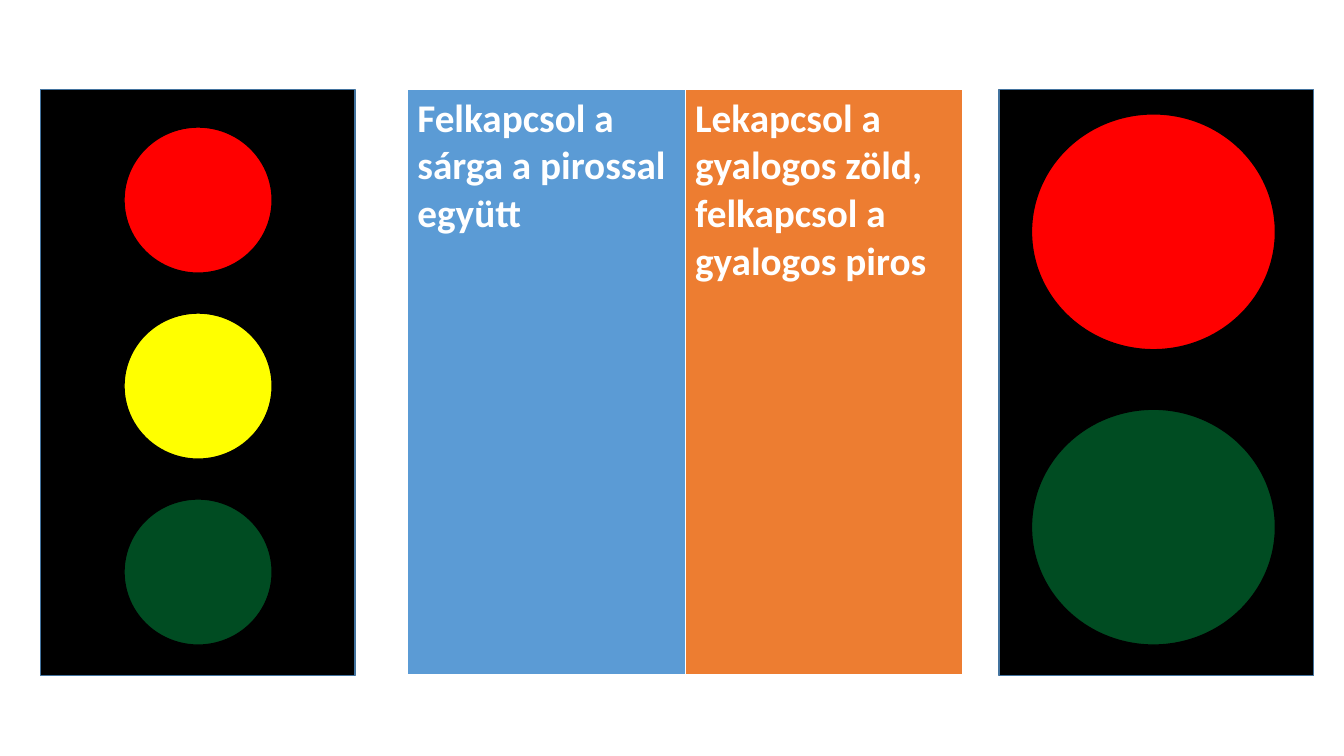
from pptx import Presentation
from pptx.dml.color import RGBColor
from pptx.enum.shapes import MSO_SHAPE
from pptx.oxml import parse_xml
from pptx.oxml.ns import nsdecls
from pptx.util import Inches, Pt

BLACK = RGBColor(0, 0, 0)
WHITE = RGBColor(255, 255, 255)
RED = RGBColor(255, 0, 0)
YELLOW = RGBColor(255, 255, 0)
GREEN = RGBColor(0x00, 0x4C, 0x22)
EDGE = RGBColor(0x43, 0x73, 0x9E)
BLUE = RGBColor(0x5B, 0x9B, 0xD5)
ORANGE = RGBColor(0xED, 0x7D, 0x31)

TOP, TALL, WIDE = 0.89, 5.81, 3.12
SIGNALS = [
    dict(left=0.4, inset=0.83, first=1.26, step=1.845, size=(1.47, 1.45),
         lamps=[RED, YELLOW, GREEN]),
    dict(left=9.91, inset=0.32, first=1.13, step=2.93, size=(2.42, 2.34),
         lamps=[RED, GREEN]),
]
STEPS = [
    ("Felkapcsol a sárga a pirossal együtt", BLUE),
    ("Lekapcsol a gyalogos zöld, felkapcsol a gyalogos piros", ORANGE),
]
TABLE_LEFT, TABLE_WIDE = 4.04, 5.51
BORDERS = [("lnL", 1), ("lnR", 1), ("lnT", 1), ("lnB", 3)]


def add_part(group, kind, box, fill, line):
    part = group.shapes.add_shape(kind, *map(Inches, box))
    part.shadow.inherit = False
    part.fill.solid()
    part.fill.fore_color.rgb = fill
    part.line.color.rgb = line
    part.line.width = Pt(1)


def add_signal(slide, left, inset, first, step, size, lamps):
    group = slide.shapes.add_group_shape()
    add_part(group, MSO_SHAPE.RECTANGLE, (left, TOP, WIDE, TALL), BLACK, EDGE)
    for row, color in enumerate(lamps):
        box = (left + inset, first + row * step, *size)
        add_part(group, MSO_SHAPE.OVAL, box, color, BLACK)


def add_steps(slide):
    box = map(Inches, (TABLE_LEFT, TOP, TABLE_WIDE, TALL))
    table = slide.shapes.add_table(1, len(STEPS), *box).table
    for cell, (text, color) in zip(table.rows[0].cells, STEPS):
        cell.text = text
        font = cell.text_frame.paragraphs[0].font
        font.name, font.size, font.bold = "Calibri", Pt(28), True
        font.color.rgb = WHITE
        props = cell._tc.get_or_add_tcPr()
        for tag, width in BORDERS:
            props.append(parse_xml(
                f'<a:{tag} {nsdecls("a")} w="{Pt(width)}"><a:solidFill>'
                f'<a:srgbClr val="{WHITE}"/></a:solidFill></a:{tag}>'))
        cell.fill.solid()
        cell.fill.fore_color.rgb = color


def main():
    deck = Presentation()
    deck.slide_width, deck.slide_height = Inches(13.33), Inches(7.5)
    slide = deck.slides.add_slide(deck.slide_layouts[6])
    for signal in SIGNALS:
        add_signal(slide, **signal)
    add_steps(slide)
    deck.save("out.pptx")


if __name__ == "__main__":
    main()
